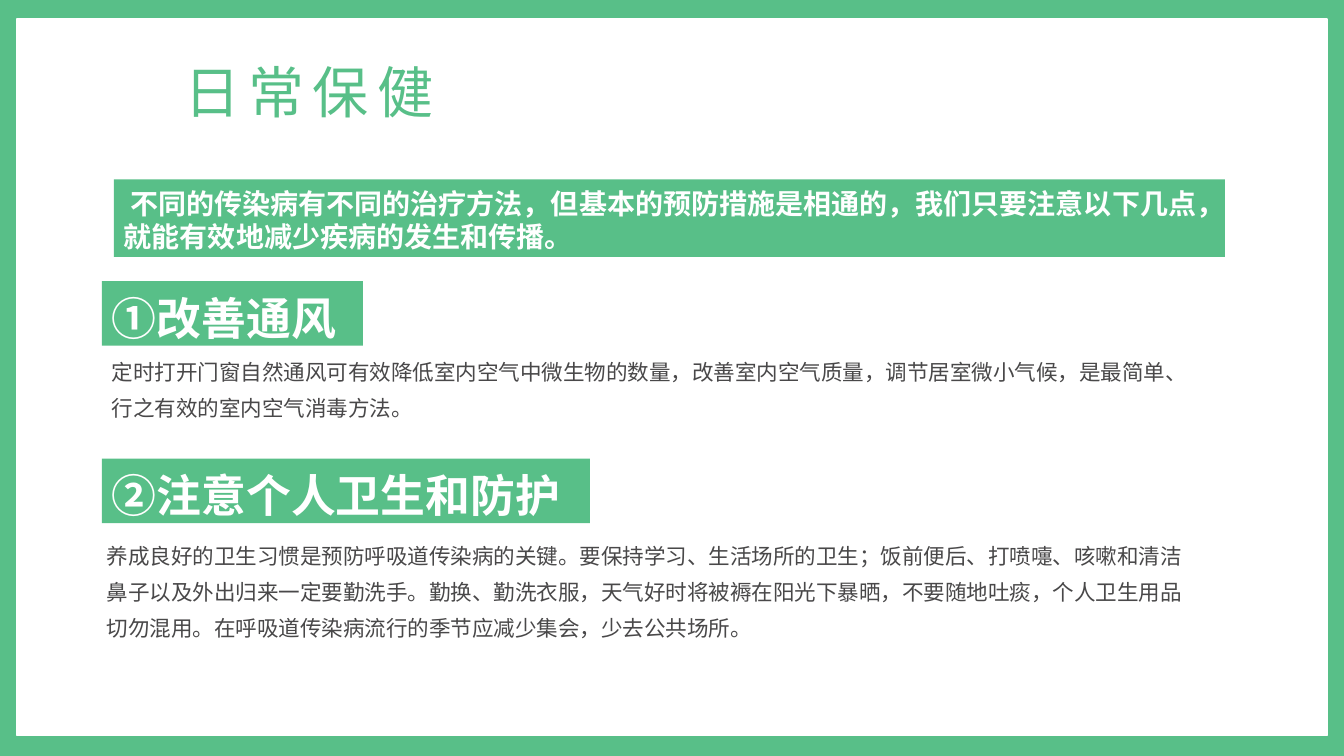
from dataclasses import dataclass

from pptx import Presentation
from pptx import util as u
from pptx.dml import color
from pptx.enum import shapes, text
from pptx.oxml import ns, xmlchemy


@dataclass(frozen=True)
class Style:
    """Type size, line pitch and top inset of one kind of text."""
    size: float
    pitch: float
    top: float
    ink: str
    bold: bool = False
    font: str = "Noto Sans CJK SC"
    track: int = 0


class Theme:
    """Colours and text styles of the slide."""
    green = "58BF88"
    white = "FFFFFF"
    title = Style(40, 48, 0.11, green, font="Noto Sans CJK JP", track=6)
    banner = Style(20, 23.6, 0.08, white, bold=True)
    head = Style(32, 38, 0.1, white, bold=True)
    body = Style(15.4, 25.7, 0.07, "494849")


def rgb(code):
    """Turn a hex code into a colour."""
    return color.RGBColor.from_string(code)


def add_run(para, words, style):
    """Add one styled run to a paragraph."""
    run = para.add_run()
    run.text = words
    font = run.font
    font.size, font.bold, font.name = u.Pt(style.size), style.bold, style.font
    font.color.rgb = rgb(style.ink)
    props = run._r.get_or_add_rPr()
    props.set("lang", "zh-CN")
    if style.track:
        props.set("spc", str(style.track * 100))
    east = xmlchemy.OxmlElement("a:ea")
    east.set("typeface", style.font)
    props.find(ns.qn("a:latin")).addnext(east)


def fill_text(shape, words, style, wrap=True):
    """Set the frame of a shape and write its words."""
    frame = shape.text_frame
    frame.word_wrap = wrap
    frame.auto_size = text.MSO_AUTO_SIZE.NONE
    frame.vertical_anchor = text.MSO_ANCHOR.TOP
    frame.margin_left = frame.margin_right = u.Inches(0.1)
    frame.margin_top, frame.margin_bottom = u.Inches(style.top), 0
    para = frame.paragraphs[0]
    para.alignment = text.PP_ALIGN.LEFT
    para.line_spacing = u.Pt(style.pitch)
    add_run(para, words, style)


def add_panel(slide, box, fill):
    """Add a flat rectangle."""
    panel = slide.shapes.add_shape(shapes.MSO_SHAPE.RECTANGLE, *map(u.Inches, box))
    panel.shadow.inherit = False
    panel.fill.solid()
    panel.fill.fore_color.rgb = rgb(fill)
    panel.line.fill.background()
    return panel


def add_label(slide, box, words, style, wrap=True):
    """Add a green panel with words on it."""
    fill_text(add_panel(slide, box, Theme.green), words, style, wrap)


def add_words(slide, box, words, style):
    """Add a plain text box."""
    fill_text(slide.shapes.add_textbox(*map(u.Inches, box)), words, style)


def main():
    """Build the slide and save it."""
    deck = Presentation()
    deck.slide_width, deck.slide_height = u.Inches(13.33), u.Inches(7.5)
    slide = deck.slides.add_slide(deck.slide_layouts[6])

    add_panel(slide, (0, 0, 13.33, 7.5), Theme.green)
    page = add_panel(slide, (0.17, 0.19, 12.99, 7.11), Theme.white)
    page.line.color.rgb = rgb(Theme.white)
    page.line.width = u.Pt(1)

    add_words(slide, (1.73, 0.46, 4.77, 0.77), "日常保健", Theme.title)
    add_label(
        slide, (1.13, 1.78, 11.02, 0.77),
        " 不同的传染病有不同的治疗方法，但基本的预防措施是相通的，我们只要注意以下几点，"
        "就能有效地减少疾病的发生和传播。", Theme.banner)

    topics = [
        ("①改善通风", (1.01, 2.79, 2.59, 0.64), (1.01, 3.39, 11.01, 0.9),
         "定时打开门窗自然通风可有效降低室内空气中微生物的数量，改善室内空气质量，"
         "调节居室微小气候，是最简单、行之有效的室内空气消毒方法。"),
        ("②注意个人卫生和防护", (1.01, 4.55, 4.84, 0.64), (0.96, 5.22, 11.07, 1.35),
         "养成良好的卫生习惯是预防呼吸道传染病的关键。要保持学习、生活场所的卫生；"
         "饭前便后、打喷嚏、咳嗽和清洁鼻子以及外出归来一定要勤洗手。勤换、勤洗衣服，"
         "天气好时将被褥在阳光下暴晒，不要随地吐痰，个人卫生用品切勿混用。"
         "在呼吸道传染病流行的季节应减少集会，少去公共场所。"),
    ]
    for head, head_box, body_box, body in topics:
        add_words(slide, body_box, body, Theme.body)
        add_label(slide, head_box, head, Theme.head, wrap=False)

    deck.save("out.pptx")


if __name__ == "__main__":
    main()
